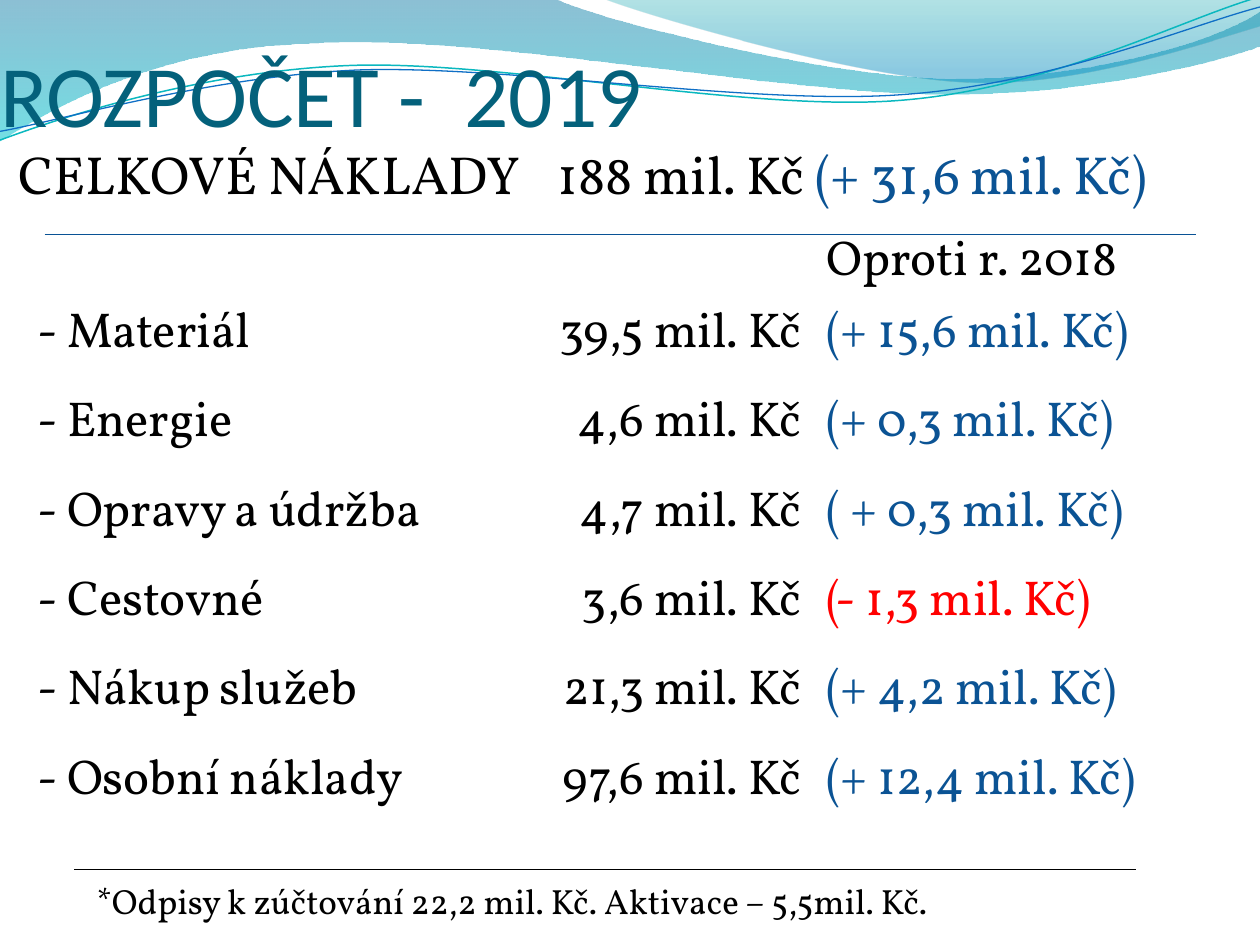
from dataclasses import dataclass

from lxml.etree import SubElement
from pptx import Presentation
from pptx.dml.color import RGBColor
from pptx.enum.shapes import MSO_CONNECTOR
from pptx.enum.text import MSO_ANCHOR, MSO_AUTO_SIZE, PP_ALIGN
from pptx.oxml.ns import qn
from pptx.util import Pt

BLACK, BLUE, RED, TEAL = "000000", "0B5394", "FF0000", "04617B"
BODY_FONT = "Vollkorn"
NO_STYLE_NO_GRID = "{2D5ABB26-0587-4C30-8999-92F81FD0307C}"


@dataclass
class Wave:
    """Outline of segments: one point is a straight line, three are a Bezier curve."""
    start: tuple
    segments: list
    stops: tuple = ()  # (position %, colour, opacity %)
    line_color: str = ""
    line_width: float = 0
    rotation: float = 0


@dataclass
class Rule:
    left: float
    right: float
    top: float
    color: str


@dataclass
class Cost:
    name: str
    amount: str
    change: str
    color: str = BLUE


WAVES = [
    Wave((0, 0), [
        [(317, -0.7)],
        [(343, 12), (478, 45), (546, 45)],
        [(614, 45), (690, 27), (720, 6.5)],
        [(720.7, 26)],
        [(708, 32), (626, 55), (537, 54)],
        [(447, 54), (275, 20), (185, 24.5)],
        [(93, 26), (33, 60), (-0.7, 81)],
    ], stops=((0, "0074A1", 45), (100, "00C6CF", 55))),
    Wave((345, -0.7), [
        [(366, 8), (491, 45), (554, 47)],
        [(616, 50), (692, 23), (720, 15)],
        [(720, 0)],
    ], stops=((0, "00A1A9", 30), (80, "008BBF", 45))),
    Wave((-1.4, 63.1), [
        [(34.2, 51.7), (114.3, 29.4), (199.4, 29.9)],
        [(284.4, 30.5), (425.8, 67.2), (512, 64.7)],
        [(599.2, 62.3), (676.1, 25.9), (720.6, 15.4)],
    ], line_color="0AB8BF", line_width=0.85, rotation=357.3),
    Wave((-1.1, 58.1), [
        [(33.2, 53.7), (118.2, 32.6), (204.3, 32.7)],
        [(290.3, 33.7), (429.1, 63.8), (515.3, 61.4)],
        [(601.4, 59.4), (678.9, 30), (721.4, 21)],
    ], line_color="0F6FC6", line_width=0.75, rotation=357.3),
]
RULES = [Rule(25.5, 683.3, 133.9, "095295"), Rule(42.5, 649.4, 496.8, BLACK)]
COSTS = [
    Cost("", "", "Oproti r. 2018", BLACK),
    Cost("- Materiál", "39,5 mil. Kč", "(+ 15,6 mil. Kč)"),
    Cost("- Energie", "4,6 mil. Kč", "(+ 0,3 mil. Kč)"),
    Cost("- Opravy a údržba", "4,7 mil. Kč", "( + 0,3 mil. Kč)"),
    Cost("- Cestovné", "3,6 mil. Kč", "(- 1,3 mil. Kč)", RED),
    Cost("- Nákup služeb", "21,3 mil. Kč", "(+ 4,2 mil. Kč)"),
    Cost("- Osobní náklady", "97,6 mil. Kč", "(+ 12,4 mil. Kč)"),
]
COLUMN_WIDTHS = [241.2, 209.5, 229.7]
ROW_HEIGHTS = [38.2] + [51.1] * 5 + [69.8]


def rgb(color: str) -> RGBColor:
    return RGBColor.from_string(color)


def apply_format(target, values: dict) -> None:
    for name, value in values.items():
        setattr(target, name, value)


def add_run(paragraph, text: str, size: float, color: str, font: str = BODY_FONT) -> None:
    run = paragraph.add_run()
    run.text = text
    apply_format(run.font, {"name": font, "size": Pt(size), "bold": False})
    run.font.color.rgb = rgb(color)


def add_tab_stop(paragraph, position: float) -> None:
    tabs = SubElement(paragraph._p.get_or_add_pPr(), qn("a:tabLst"))
    SubElement(tabs, qn("a:tab"), pos=str(Pt(position)), algn="l")


def bend_segments(shape, segments: list) -> None:
    """Merge the three straight lines of each curved segment into one Bezier curve."""
    lines = shape._element.spPr.iter(qn("a:lnTo"))
    remaining = iter(list(lines))
    for segment in segments:
        group = [next(remaining) for _ in segment]
        if len(group) == 1:
            continue
        outline = group[0].getparent()
        curve = SubElement(outline, qn("a:cubicBezTo"))
        group[0].addprevious(curve)
        for line in group:
            curve.append(line[0])
            outline.remove(line)


def set_gradient(shape, stops: tuple) -> None:
    """Downward gradient whose stops have their own opacity."""
    shape.fill.gradient()
    gradient = shape._element.spPr.find(qn("a:gradFill"))
    for child in list(gradient):
        gradient.remove(child)
    stop_list = SubElement(gradient, qn("a:gsLst"))
    for position, color, opacity in stops:
        stop = SubElement(stop_list, qn("a:gs"), pos=str(position * 1000))
        color_element = SubElement(stop, qn("a:srgbClr"), val=color)
        SubElement(color_element, qn("a:alpha"), val=str(opacity * 1000))
    SubElement(gradient, qn("a:lin"), ang="5400000", scaled="0")


def draw_wave(slide, wave: Wave) -> None:
    points = [(Pt(x), Pt(y)) for segment in wave.segments for x, y in segment]
    builder = slide.shapes.build_freeform(Pt(wave.start[0]), Pt(wave.start[1]))
    builder.add_line_segments(points, close=bool(wave.stops))
    shape = builder.convert_to_shape()
    bend_segments(shape, wave.segments)
    shape.rotation = wave.rotation
    shape.shadow.inherit = False
    if wave.stops:
        set_gradient(shape, wave.stops)
        shape.line.fill.background()
    else:
        shape.fill.background()
        shape.line.color.rgb = rgb(wave.line_color)
        shape.line.width = Pt(wave.line_width)


def draw_rule(slide, rule: Rule) -> None:
    connector = slide.shapes.add_connector(
        MSO_CONNECTOR.STRAIGHT, Pt(rule.left), Pt(rule.top), Pt(rule.right), Pt(rule.top))
    connector.line.color.rgb = rgb(rule.color)
    connector.line.width = Pt(0.75)
    SubElement(connector._element.spPr, qn("a:effectLst"))


def draw_title(slide) -> None:
    title = slide.shapes.title
    apply_format(title, {"left": 0, "top": Pt(9.4), "width": Pt(720), "height": Pt(73.4)})
    apply_format(title.text_frame, {
        "margin_left": 0, "margin_right": 0, "margin_top": Pt(3.6), "margin_bottom": 0,
        "vertical_anchor": MSO_ANCHOR.BOTTOM, "auto_size": MSO_AUTO_SIZE.NONE})
    paragraph = title.text_frame.paragraphs[0]
    paragraph.alignment = PP_ALIGN.LEFT
    add_tab_stop(paragraph, 265.5)
    add_run(paragraph, "ROZPOČET -\t2019", 50, TEAL, "Calibri")
    slide.shapes._spTree.append(title._element)  # in front of the waves


def add_text_line(slide, left: float, top: float, width: float, height: float,
                  margin_top: float = 3.6):
    box = slide.shapes.add_textbox(Pt(left), Pt(top), Pt(width), Pt(height))
    apply_format(box.text_frame, {"word_wrap": True, "margin_top": Pt(margin_top)})
    return box.text_frame.paragraphs[0]


def draw_cost_table(slide) -> None:
    table = slide.shapes.add_table(
        len(COSTS), len(COLUMN_WIDTHS), Pt(14.4), Pt(127.4),
        Pt(sum(COLUMN_WIDTHS)), Pt(sum(ROW_HEIGHTS))).table
    apply_format(table, {"first_row": False, "horz_banding": False})
    table._tbl.tblPr.find(qn("a:tableStyleId")).text = NO_STYLE_NO_GRID
    for column, width in zip(table.columns, COLUMN_WIDTHS):
        column.width = Pt(width)
    for row, height, cost in zip(table.rows, ROW_HEIGHTS, COSTS):
        row.height = Pt(height)
        contents = [(cost.name, BLACK, PP_ALIGN.LEFT), (cost.amount, BLACK, PP_ALIGN.RIGHT),
                    (cost.change, cost.color, PP_ALIGN.LEFT)]
        for cell, (text, color, alignment) in zip(row.cells, contents):
            cell.fill.background()
            paragraph = cell.text_frame.paragraphs[0]
            paragraph.alignment = alignment
            if text:
                add_run(paragraph, text, 28, color)


def main() -> None:
    presentation = Presentation()
    apply_format(presentation, {"slide_width": Pt(720), "slide_height": Pt(540)})
    slide = presentation.slides.add_slide(presentation.slide_layouts[5])
    for wave in WAVES:
        draw_wave(slide, wave)
    draw_title(slide)
    total = add_text_line(slide, 0, 77, 705.6, 56.9, margin_top=3.4)
    total._p.get_or_add_pPr().set("marL", str(Pt(3.6)))
    add_tab_stop(total, 308)
    add_run(total, "CELKOVÉ NÁKLADY\t188 mil. Kč ", 30.6, BLACK)
    add_run(total, "(+ 31,6 mil. Kč)", 30.6, BLUE)
    for rule in RULES:
        draw_rule(slide, rule)
    footnote = add_text_line(slide, 48.2, 499.3, 583.9, 31.7)
    add_run(footnote, "*Odpisy k zúčtování 22,2 mil. Kč. Aktivace – 5,5mil. Kč.", 20, BLACK)
    draw_cost_table(slide)
    presentation.save("out.pptx")


if __name__ == "__main__":
    main()
